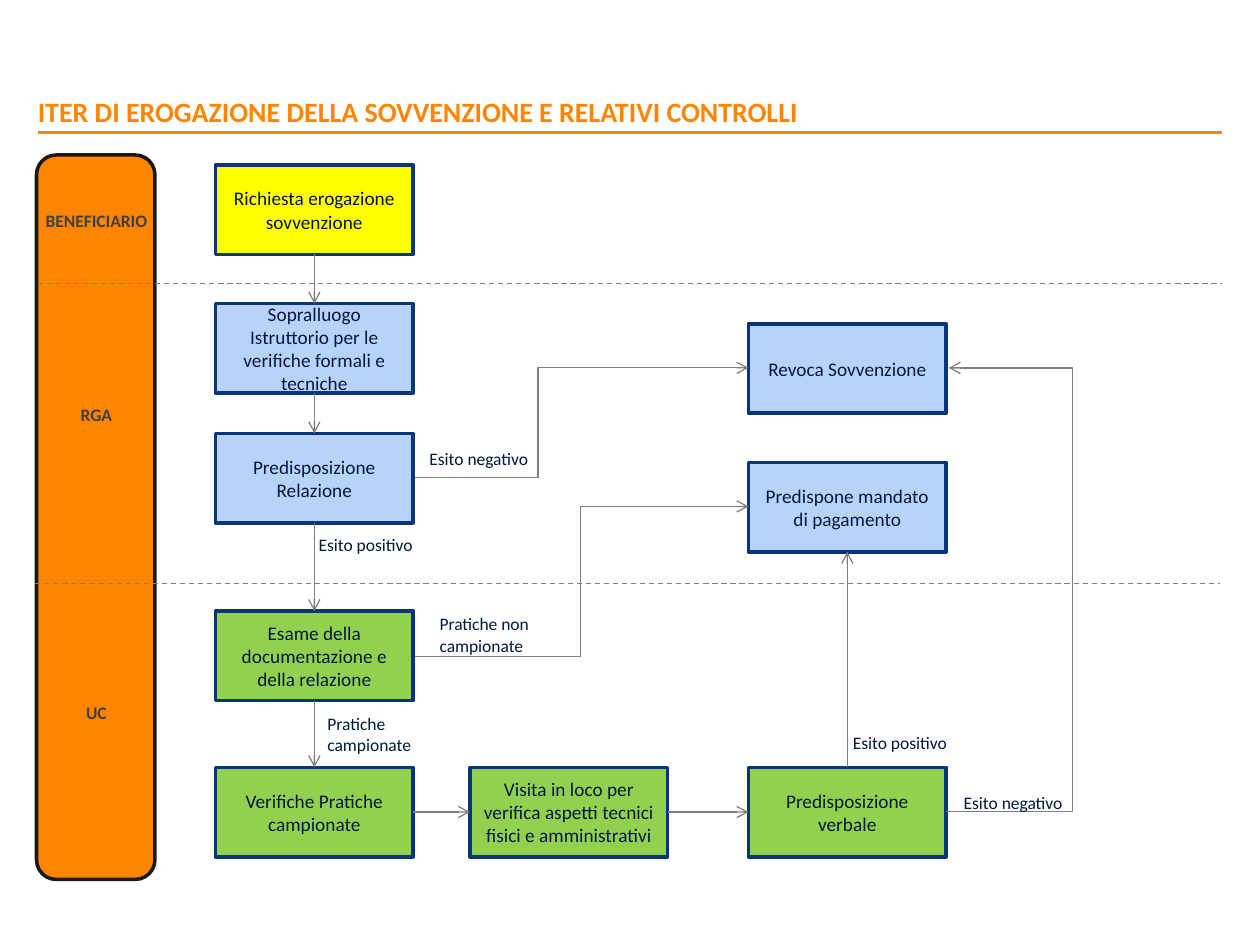
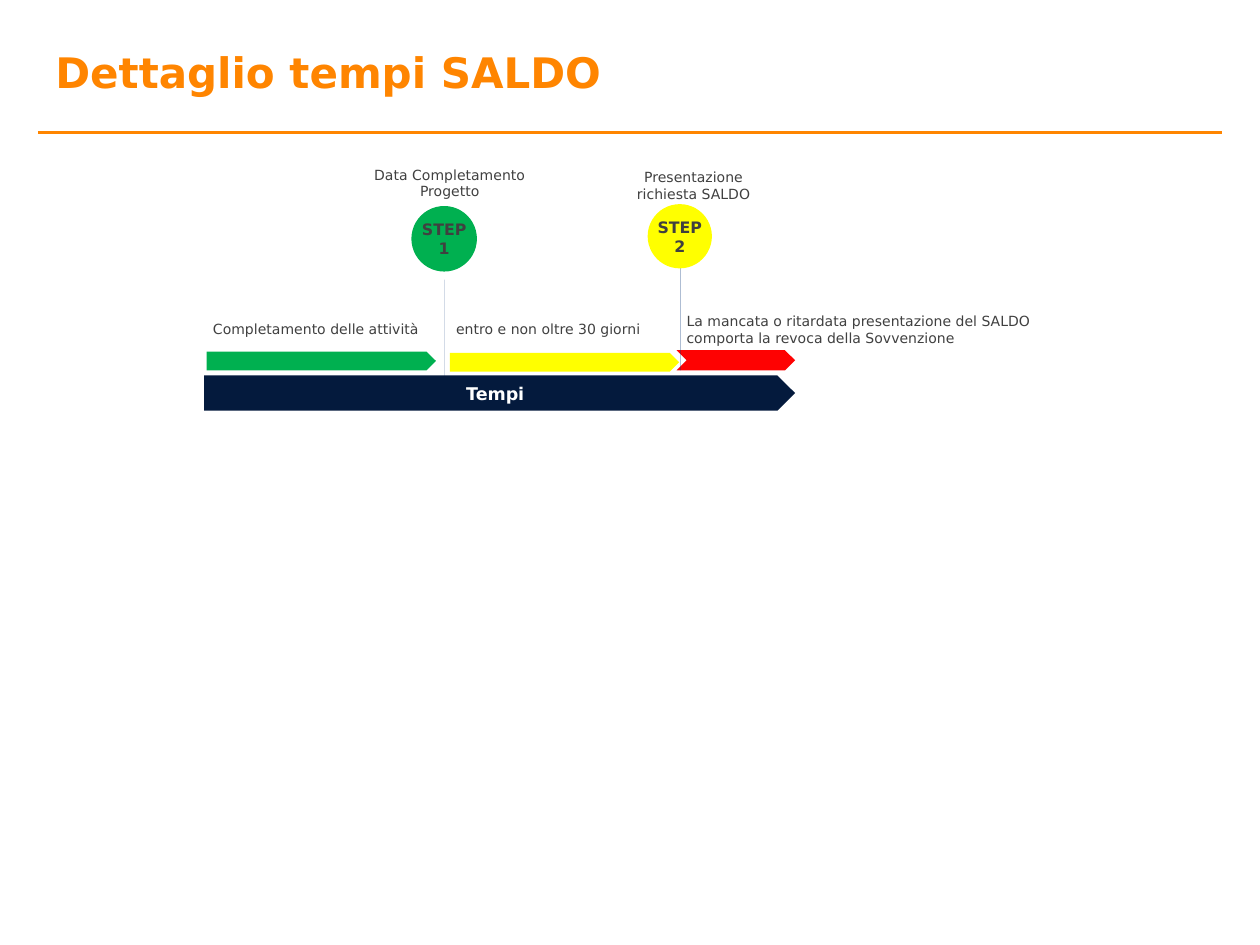
from lxml import etree
from pptx import Presentation
from pptx.dml.color import RGBColor
from pptx.enum.dml import MSO_LINE
from pptx.enum.shapes import MSO_CONNECTOR, MSO_SHAPE
from pptx.enum.text import MSO_ANCHOR, PP_ALIGN
from pptx.oxml.ns import qn
from pptx.util import Inches, Pt

STRAIGHT, ELBOW = MSO_CONNECTOR.STRAIGHT, MSO_CONNECTOR.ELBOW
RECTANGLE, ROUNDED = MSO_SHAPE.RECTANGLE, MSO_SHAPE.ROUNDED_RECTANGLE
PENTAGON, CHEVRON = MSO_SHAPE.PENTAGON, MSO_SHAPE.CHEVRON
CIRCLE = MSO_SHAPE.FLOWCHART_CONNECTOR
LEFT, CENTER = PP_ALIGN.LEFT, PP_ALIGN.CENTER
TOP, MIDDLE, BOTTOM = MSO_ANCHOR.TOP, MSO_ANCHOR.MIDDLE, MSO_ANCHOR.BOTTOM
DASH = MSO_LINE.DASH

ORANGE, NAVY, BLUE, PALE_BLUE = "FF8500", "041A3D", "09357A", "B8D2FA"
YELLOW, LIME, GREEN, RED = "FFFF00", "92D050", "00B050", "FE0202"
GRAY, DARK_GRAY, BLACK, WHITE = "808080", "404040", "191919", "FFFFFF"
FLOW_FONT, TIME_FONT = "Calibri", "DejaVu Sans"

STEP_WIDTH, STEP_HEIGHT = 1.57, 0.71
FIRST_COLUMN, SECOND_COLUMN, THIRD_COLUMN = 1.71, 3.73, 5.94
LAST_ROW = 6.09
SITE_TOP, SITE_LEFT, SITE_BOTTOM, SITE_RIGHT = range(4)


def color(hex_text):
    return RGBColor.from_string(hex_text)


def write(shape, text, font=FLOW_FONT, size=10, ink=NAVY, bold=False,
          align=LEFT, anchor=TOP, inset=(0.1, 0.05), wrap=True):
    """Fill a shape with text, one paragraph for each line."""
    frame = shape.text_frame
    frame.word_wrap = wrap
    frame.vertical_anchor = anchor
    frame.margin_left = frame.margin_right = Inches(inset[0])
    frame.margin_top = frame.margin_bottom = Inches(inset[1])
    frame.text = text
    for para in frame.paragraphs:
        para.alignment = align
        para.font.name = font
        para.font.size = Pt(size)
        para.font.bold = bold
        para.font.color.rgb = color(ink)


def add_text(page, text, left, top, width, height, **style):
    box = page.shapes.add_textbox(*map(Inches, (left, top, width, height)))
    write(box, text, **style)


def add_block(page, kind, left, top, width, height, fill, outline=None, weight=2):
    block = page.shapes.add_shape(kind, *map(Inches, (left, top, width, height)))
    block.shadow.inherit = False
    block.fill.solid()
    block.fill.fore_color.rgb = color(fill)
    if outline:
        block.line.color.rgb = color(outline)
        block.line.width = Pt(weight)
    else:
        block.line.fill.background()
    return block


def add_line(page, start, end, ink=GRAY, weight=0.75, kind=STRAIGHT,
             dash=None, arrow=False, opacity=None):
    line = page.shapes.add_connector(kind, *map(Inches, (*start, *end)))
    line.line.color.rgb = color(ink)
    line.line.width = Pt(weight)
    if dash:
        line.line.dash_style = dash
    properties = line._element.spPr
    outline = properties.find(qn("a:ln"))
    if opacity:
        tint = outline.find(".//" + qn("a:srgbClr"))
        etree.SubElement(tint, qn("a:alpha"), val=str(opacity * 1000))
    if arrow:
        etree.SubElement(outline, qn("a:tailEnd"), type="arrow")
    etree.SubElement(properties, qn("a:effectLst"))
    return line


def add_page(deck):
    """Add a blank page with the orange rule."""
    page = deck.slides.add_slide(deck.slide_layouts[6])
    add_line(page, (0.3, 1.05), (9.7, 1.05), ORANGE, 2)
    return page


def add_title(page, text, left, top, width, height, **style):
    add_text(page, text, left, top, width, height, ink=ORANGE, bold=True,
             inset=(0, 0), **style)


def add_step(page, text, left, top, fill):
    step = add_block(page, RECTANGLE, left, top, STEP_WIDTH, STEP_HEIGHT, fill, BLUE)
    write(step, text, size=11, align=CENTER, anchor=MIDDLE)
    return step


def join(page, first, first_site, second, second_site):
    """Glue a straight arrow between two steps."""
    arrow = add_line(page, (0, 0), (1, 1), arrow=True)
    arrow.begin_connect(first, first_site)
    arrow.end_connect(second, second_site)


def add_bend(page, start, end, turn):
    """Draw an elbow arrow whose upright part stands at x = turn."""
    bend = add_line(page, start, end, kind=ELBOW, arrow=True)
    ratio = (turn - start[0]) / (end[0] - start[0])
    geometry = bend._element.spPr.find(qn("a:prstGeom"))
    guides = geometry.find(qn("a:avLst"))
    if guides is None:
        guides = etree.SubElement(geometry, qn("a:avLst"))
    etree.SubElement(guides, qn("a:gd"), name="adj1",
                     fmla=f"val {round(ratio * 100000)}")


def build_flow(deck):
    page = add_page(deck)
    add_title(page, "ITER DI EROGAZIONE DELLA SOVVENZIONE E RELATIVI CONTROLLI",
              0.3, 0.75, 7.98, 0.27, size=16, anchor=BOTTOM)

    main_steps = [add_step(page, text, FIRST_COLUMN, top, fill) for text, top, fill in (
        ("Richiesta erogazione sovvenzione", 1.31, YELLOW),
        ("Sopralluogo Istruttorio per le verifiche formali e tecniche", 2.41, PALE_BLUE),
        ("Predisposizione Relazione", 3.44, PALE_BLUE),
        ("Esame della documentazione e della relazione", 4.85, LIME),
        ("Verifiche Pratiche campionate", LAST_ROW, LIME),
    )]
    visit = add_step(page, "Visita in loco per verifica aspetti tecnici fisici e amministrativi",
                     SECOND_COLUMN, LAST_ROW, LIME)
    report = add_step(page, "Predisposizione verbale", THIRD_COLUMN, LAST_ROW, LIME)
    add_step(page, "Revoca Sovvenzione", THIRD_COLUMN, 2.57, PALE_BLUE)
    payment = add_step(page, "Predispone mandato di pagamento",
                       THIRD_COLUMN, 3.67, PALE_BLUE)

    for upper, lower in zip(main_steps, main_steps[1:]):
        join(page, upper, SITE_BOTTOM, lower, SITE_TOP)
    join(page, main_steps[-1], SITE_RIGHT, visit, SITE_LEFT)
    join(page, visit, SITE_RIGHT, report, SITE_LEFT)
    join(page, report, SITE_TOP, payment, SITE_BOTTOM)
    for start, end, turn in (
        ((3.29, 3.79), (5.94, 2.92), 4.27),
        ((3.29, 5.21), (5.94, 4.02), 4.61),
        ((7.51, 6.44), (7.53, 2.92), 8.51),
    ):
        add_bend(page, start, end, turn)

    for text, left, top in (
        ("Pratiche campionate", 2.5, 5.61),
        ("Pratiche non campionate", 3.39, 4.82),
        ("Esito positivo", 6.67, 5.76),
        ("Esito negativo", 7.55, 6.24),
        ("Esito positivo", 2.43, 4.19),
        ("Esito negativo", 3.31, 3.51),
    ):
        add_text(page, text, left, top, 1.31, 0.27)

    add_block(page, ROUNDED, 0.29, 1.23, 0.94, 5.75, ORANGE, BLACK)
    for office, top in (("BENEFICIARIO", 1.62), ("RGA", 3.16), ("UC", 5.52)):
        add_text(page, office, 0.2, top, 1.13, 0.28, ink=DARK_GRAY, bold=True,
                 align=CENTER, inset=(0, 0.05))
    for left, top in ((0.28, 4.63), (0.3, 2.25)):
        add_line(page, (left, top), (left + 9.4, top), dash=DASH)


def add_milestone(page, text, left, top, size, fill, outline=None):
    circle = add_block(page, CIRCLE, left, top, size, size, fill, outline, 0.75)
    write(circle, text, font=TIME_FONT, size=9, ink=DARK_GRAY, bold=True,
          align=CENTER, anchor=MIDDLE, inset=(0, 0))


def add_note(page, text, left, top, width, height, **style):
    add_text(page, text, left, top, width, height, font=TIME_FONT, size=8,
             ink=DARK_GRAY, **style)


def build_timeline(deck):
    page = add_page(deck)
    add_title(page, "Dettaglio tempi SALDO", 0.44, 0.37, 7.47, 0.52,
              font=TIME_FONT, size=24)

    add_block(page, PENTAGON, 3.57, 2.8, 1.82, 0.15, YELLOW)
    add_block(page, CHEVRON, 5.37, 2.78, 0.94, 0.16, RED)
    add_milestone(page, "STEP\n1", 3.27, 1.64, 0.51, GREEN, GREEN)
    for x, bottom, top in ((3.53, 3, 2.22), (5.4, 2.94, 2.09)):
        add_line(page, (x, bottom), (x, top), BLUE, 0.25, opacity=50)
    add_milestone(page, "STEP\n2", 5.14, 1.62, 0.51, YELLOW)
    time_arrow = add_block(page, PENTAGON, 1.62, 2.98, 4.69, 0.28, NAVY)
    write(time_arrow, "Tempi", font=TIME_FONT, ink=WHITE, bold=True,
          align=CENTER, anchor=MIDDLE, inset=(0, 0))
    add_block(page, PENTAGON, 1.64, 2.79, 1.82, 0.15, GREEN)

    add_note(page, "Data Completamento\nProgetto", 2.87, 1.27, 1.4, 0.37,
             align=CENTER, wrap=False)
    add_note(page, "Presentazione\nrichiesta SALDO", 4.95, 1.29, 1.11, 0.37,
             align=CENTER, wrap=False)
    add_note(page, "Completamento delle attività", 1.65, 2.5, 1.89, 0.21,
             inset=(0.04, 0.04))
    add_note(page, "entro e non oltre 30 giorni", 3.58, 2.5, 1.79, 0.21,
             inset=(0.04, 0.04))
    add_note(page, "La mancata o ritardata presentazione del SALDO comporta "
             "la revoca della Sovvenzione", 5.35, 2.43, 3.11, 0.37)


def main():
    deck = Presentation()
    deck.slide_width, deck.slide_height = Inches(10), Inches(7.5)
    build_flow(deck)
    build_timeline(deck)
    deck.save("out.pptx")


if __name__ == "__main__":
    main()
